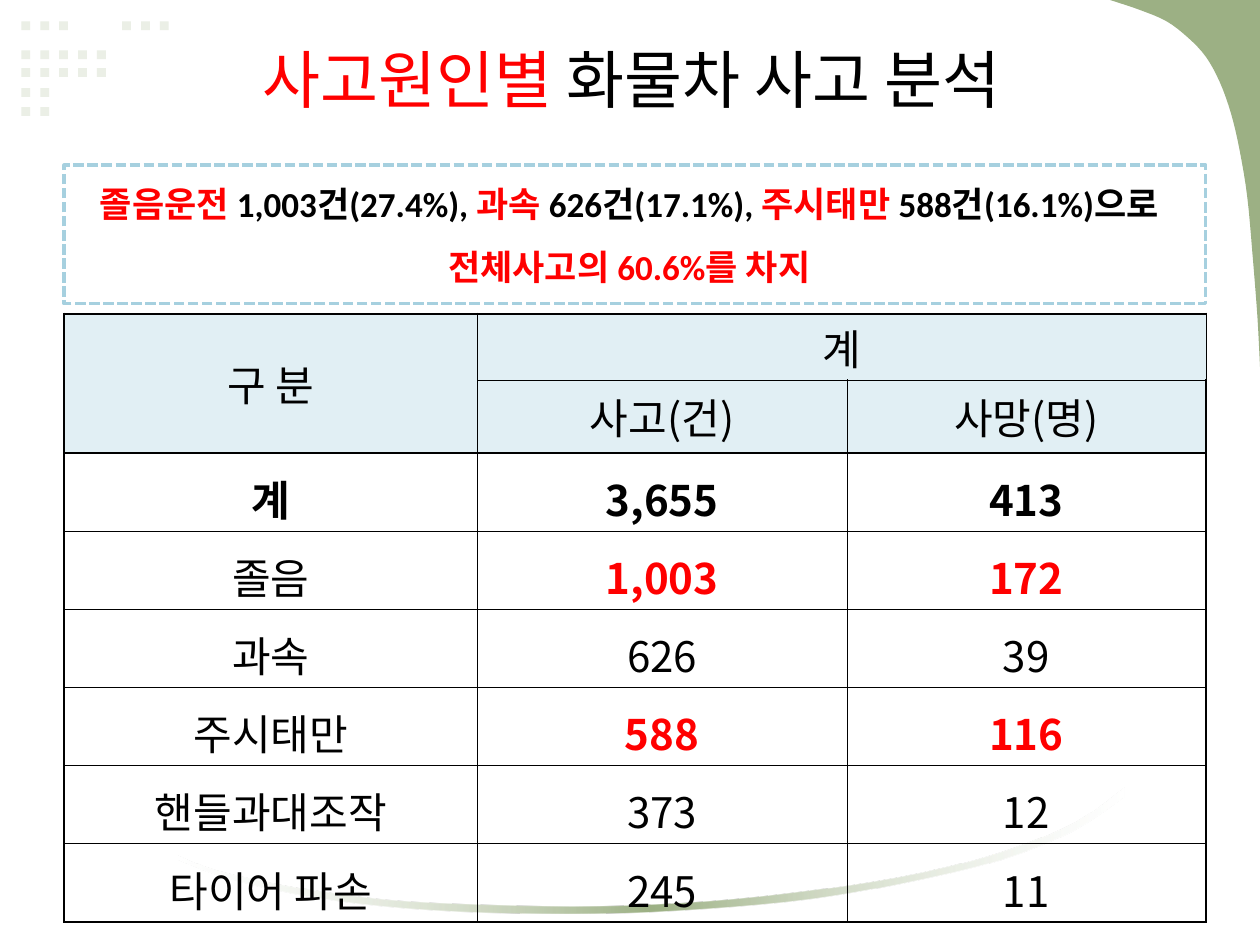
from dataclasses import dataclass
from typing import Iterator, NamedTuple

import pptx
import pptx.dml.color
import pptx.enum.dml
import pptx.enum.shapes
import pptx.enum.text
import pptx.oxml
import pptx.oxml.ns
import pptx.util

SLIDE_WIDTH = pptx.util.Inches(10)
SLIDE_HEIGHT = pptx.util.Inches(7.5)
Point = tuple[float, float]


@dataclass(frozen=True)
class Theme:
    ink: str = "000000"
    accent: str = "FF0000"
    green: str = "9CB084"
    dot: str = "EBEFE6"
    header: str = "E1EFF4"
    frame: str = "A6D0DF"
    white: str = "FFFFFF"
    korean: str = "Noto Sans CJK KR"
    latin: str = "Calibri"
    title_size: float = 36
    table_size: float = 24
    summary_size: float = 20
    thick: float = 1.5
    thin: float = 0.25


THEME = Theme()


class Area(NamedTuple):
    """A rectangle in percent of the slide's width and height."""
    left: float
    top: float
    width: float
    height: float

    def emu(self) -> list[int]:
        sides = (SLIDE_WIDTH, SLIDE_HEIGHT) * 2
        return [round(share * side / 100) for share, side in zip(self, sides)]


class Span(NamedTuple):
    text: str
    color: str = THEME.ink


class CauseRow(NamedTuple):
    cause: str
    accidents: str
    deaths: str
    color: str = THEME.ink
    bold_cause: bool = False
    bold_values: bool = False


class DotRow(NamedTuple):
    top: float
    columns: tuple[float, ...]


TITLE_AREA = Area(5.1, 1.73, 90, 13.2)
SUMMARY_AREA = Area(4.3, 16.4, 91.3, 14.13)
FRAME_AREA = Area(5.1, 17.47, 90.6, 14.67)
TABLE_AREA = Area(5.1, 33.2, 90.6, 58.13)
COLUMN_WIDTHS = (3.28, 2.93, 2.85)
ROW_HEIGHTS = (0.49, 0.55) + (0.57,) * 6
HEADER_ROWS = 2

TITLE = [Span("사고원인별", THEME.accent), Span(" 화물차 사고 분석")]
SUMMARY = [
    Span("졸음운전 ", THEME.accent), Span("1,003건(27.4%), "),
    Span("과속 ", THEME.accent), Span("626건(17.1%), "),
    Span("주시태만 ", THEME.accent), Span("588건(16.1%)으로 "),
    Span("전체사고의 60.6%를 차지", THEME.accent),
]
CAUSES = [
    CauseRow("계", "3,655", "413", bold_cause=True, bold_values=True),
    CauseRow("졸음", "1,003", "172", THEME.accent, bold_values=True),
    CauseRow("과속", "626", "39"),
    CauseRow("주시태만", "588", "116", THEME.accent, bold_values=True),
    CauseRow("핸들과대조작", "373", "12"),
    CauseRow("타이어 파손", "245", "11"),
]

DOT_ORIGIN, DOT_PITCH, DOT_SIZE = 1.7, 1.5, 0.7
DOTS = [
    DotRow(2.27, (0, 1, 2, 5.33, 6.33, 7.33)),
    DotRow(5.33, (0, 1, 2, 3, 4)),
    DotRow(7.2, (0, 1, 2, 3, 4)),
    DotRow(9.33, (0, 1)),
    DotRow(11.33, (0, 1)),
]

# Curve knots in inches
CORNER = [(8.81, 0), (9.05, 0.08), (9.26, 0.17), (9.43, 0.3), (9.57, 0.45), (9.68, 0.65),
          (9.77, 0.9), (9.84, 1.2), (9.9, 1.57), (9.94, 2.01), (9.98, 2.52), (10, 2.91)]
SWOOSH_LOWER = [(8.92, 6.32), (8.52, 6.59), (7.95, 6.82), (7.25, 6.99), (6.46, 7.13),
                (5.6, 7.21), (4.72, 7.25), (3.85, 7.24), (3.04, 7.19), (2.32, 7.09),
                (1.72, 6.94), (1.42, 6.82)]
SWOOSH_UPPER = [(1.42, 6.79), (1.73, 6.91), (2.34, 7.04), (3.07, 7.14), (3.89, 7.18),
                (4.76, 7.19), (5.64, 7.15), (6.49, 7.06), (7.29, 6.93), (7.98, 6.75),
                (8.54, 6.52), (8.92, 6.25)]


def rgb(color: str) -> pptx.dml.color.RGBColor:
    return pptx.dml.color.RGBColor.from_string(color)


def smooth(knots: list[Point], steps: int = 4) -> Iterator[Point]:
    """Sample a Catmull-Rom curve through the knots."""
    padded = [knots[0], *knots, knots[-1]]
    for a, b, c, d in zip(padded, padded[1:], padded[2:], padded[3:]):
        for t in (step / steps for step in range(steps)):
            yield tuple(
                q + t * (r - p) / 2 + t**2 * (2 * p - 5 * q + 4 * r - s) / 2
                + t**3 * (3 * q - p - 3 * r + s) / 2
                for p, q, r, s in zip(a, b, c, d))
    yield knots[-1]


def write(frame, spans: list[Span], *, size: float, font: str = THEME.korean,
          bold: bool = False, spacing: float = 1.0) -> None:
    para = frame.paragraphs[0]
    para.alignment = pptx.enum.text.PP_ALIGN.CENTER
    para.line_spacing = spacing
    for span in spans:
        run = para.add_run()
        run.text = span.text
        run.font.size = pptx.util.Pt(size)
        run.font.bold = bold
        run.font.color.rgb = rgb(span.color)
        run.font.name = font
        east_asian = pptx.oxml.ns.qn("a:ea")
        run.font._element.makeelement(east_asian)
        latin = run.font._element.find(pptx.oxml.ns.qn("a:latin"))
        latin.addnext(latin.makeelement(east_asian, {"typeface": THEME.korean}))


def draw_rectangle(page, area: Area, fill: str | None = None):
    box = page.shapes.add_shape(pptx.enum.shapes.MSO_SHAPE.RECTANGLE, *area.emu())
    box.shadow.inherit = False
    if fill:
        box.fill.solid()
        box.fill.fore_color.rgb = rgb(fill)
    else:
        box.fill.background()
    box.line.fill.background()
    return box


def draw_outline(page, points: list[Point]):
    corners = [(pptx.util.Inches(x), pptx.util.Inches(y)) for x, y in points]
    builder = page.shapes.build_freeform(*corners[0], scale=1.0)
    builder.add_line_segments(corners[1:], close=True)
    outline = builder.convert_to_shape()
    outline.shadow.inherit = False
    outline.line.fill.background()
    outline.fill.solid()
    outline.fill.fore_color.rgb = rgb(THEME.green)
    return outline


def fade_ends(shape) -> None:
    """Turn the solid fill into a gradient that fades to white at both ends."""
    end = f'<a:srgbClr val="{THEME.white}"><a:alpha val="30000"/></a:srgbClr>'
    gradient = pptx.oxml.parse_xml(
        f'<a:gradFill {pptx.oxml.ns.nsdecls("a")} rotWithShape="1"><a:gsLst>'
        f'<a:gs pos="0">{end}</a:gs>'
        f'<a:gs pos="50000"><a:srgbClr val="{THEME.green}"/></a:gs>'
        f'<a:gs pos="100000">{end}</a:gs></a:gsLst><a:lin ang="0" scaled="1"/></a:gradFill>')
    properties = shape._element.spPr
    properties.replace(properties.find(pptx.oxml.ns.qn("a:solidFill")), gradient)


def draw_background(page) -> None:
    for row in DOTS:
        for column in row.columns:
            left = DOT_ORIGIN + column * DOT_PITCH
            draw_rectangle(page, Area(left, row.top, DOT_SIZE, DOT_SIZE * 4 / 3), THEME.dot)
    draw_outline(page, [*smooth(CORNER), (10, 0)])
    fade_ends(draw_outline(page, [*smooth(SWOOSH_LOWER), *smooth(SWOOSH_UPPER)]))


def set_borders(cell, row: int, column: int) -> None:
    """Thick lines run round the table and under its header."""
    thick_rows, thick_columns = (0, HEADER_ROWS, len(ROW_HEIGHTS)), (0, len(COLUMN_WIDTHS))
    edges = {"lnL": column in thick_columns, "lnR": column + 1 in thick_columns,
             "lnT": row in thick_rows, "lnB": row + 1 in thick_rows}
    for tag, is_thick in edges.items():
        width = pptx.util.Pt(THEME.thick if is_thick else THEME.thin)
        cell._tc.get_or_add_tcPr().append(pptx.oxml.parse_xml(
            f'<a:{tag} {pptx.oxml.ns.nsdecls("a")} w="{width}"><a:solidFill>'
            f'<a:srgbClr val="{THEME.ink}"/></a:solidFill></a:{tag}>'))


def draw_table(page) -> None:
    table = page.shapes.add_table(
        len(ROW_HEIGHTS), len(COLUMN_WIDTHS), *TABLE_AREA.emu()).table
    table.first_row = table.horz_banding = False
    for column, width in zip(table.columns, COLUMN_WIDTHS):
        column.width = pptx.util.Inches(width)
    for row, height in zip(table.rows, ROW_HEIGHTS):
        row.height = pptx.util.Inches(height)
    for row in range(len(ROW_HEIGHTS)):
        for column in range(len(COLUMN_WIDTHS)):
            cell = table.cell(row, column)
            set_borders(cell, row, column)
            cell.vertical_anchor = pptx.enum.text.MSO_ANCHOR.MIDDLE
            if row != 1:
                cell.margin_left = cell.margin_right = pptx.util.Inches(0.02)
                cell.margin_top = cell.margin_bottom = pptx.util.Inches(0.02)
            if row < HEADER_ROWS:
                cell.fill.solid()
                cell.fill.fore_color.rgb = rgb(THEME.header)
            else:
                cell.fill.background()
    table.cell(0, 0).merge(table.cell(1, 0))
    table.cell(0, 1).merge(table.cell(0, 2))
    headings = {(0, 0): "구 분", (0, 1): "계", (1, 1): "사고(건)", (1, 2): "사망(명)"}
    for place, heading in headings.items():
        write(table.cell(*place).text_frame, [Span(heading)], size=THEME.table_size)
    for row, entry in enumerate(CAUSES, HEADER_ROWS):
        write(table.cell(row, 0).text_frame, [Span(entry.cause)], size=THEME.table_size,
              font=THEME.latin, bold=entry.bold_cause, spacing=1.2)
        for column, value in enumerate((entry.accidents, entry.deaths), 1):
            write(table.cell(row, column).text_frame, [Span(value, entry.color)],
                  size=THEME.table_size, bold=entry.bold_values, spacing=1.2)


def draw_title(page) -> None:
    title = page.shapes.title
    title.left, title.top, title.width, title.height = TITLE_AREA.emu()
    title.text_frame.vertical_anchor = pptx.enum.text.MSO_ANCHOR.MIDDLE
    write(title.text_frame, TITLE, size=THEME.title_size)


def draw_summary(page) -> None:
    box = page.shapes.add_textbox(*SUMMARY_AREA.emu())
    box.text_frame.word_wrap = True
    box.text_frame.auto_size = pptx.enum.text.MSO_AUTO_SIZE.SHAPE_TO_FIT_TEXT
    write(box.text_frame, SUMMARY, size=THEME.summary_size, font=THEME.latin,
          bold=True, spacing=1.5)
    frame = draw_rectangle(page, FRAME_AREA)
    frame.line.color.rgb = rgb(THEME.frame)
    frame.line.width = pptx.util.Pt(2)
    frame.line.dash_style = pptx.enum.dml.MSO_LINE.SQUARE_DOT
    frame.line._ln.prstDash.set("val", "sysDash")


def main() -> None:
    deck = pptx.Presentation()
    deck.slide_width, deck.slide_height = SLIDE_WIDTH, SLIDE_HEIGHT
    page = deck.slides.add_slide(deck.slide_layouts.get_by_name("Title Only"))
    draw_background(page)
    draw_title(page)
    draw_table(page)
    draw_summary(page)
    deck.save("out.pptx")


if __name__ == "__main__":
    main()
